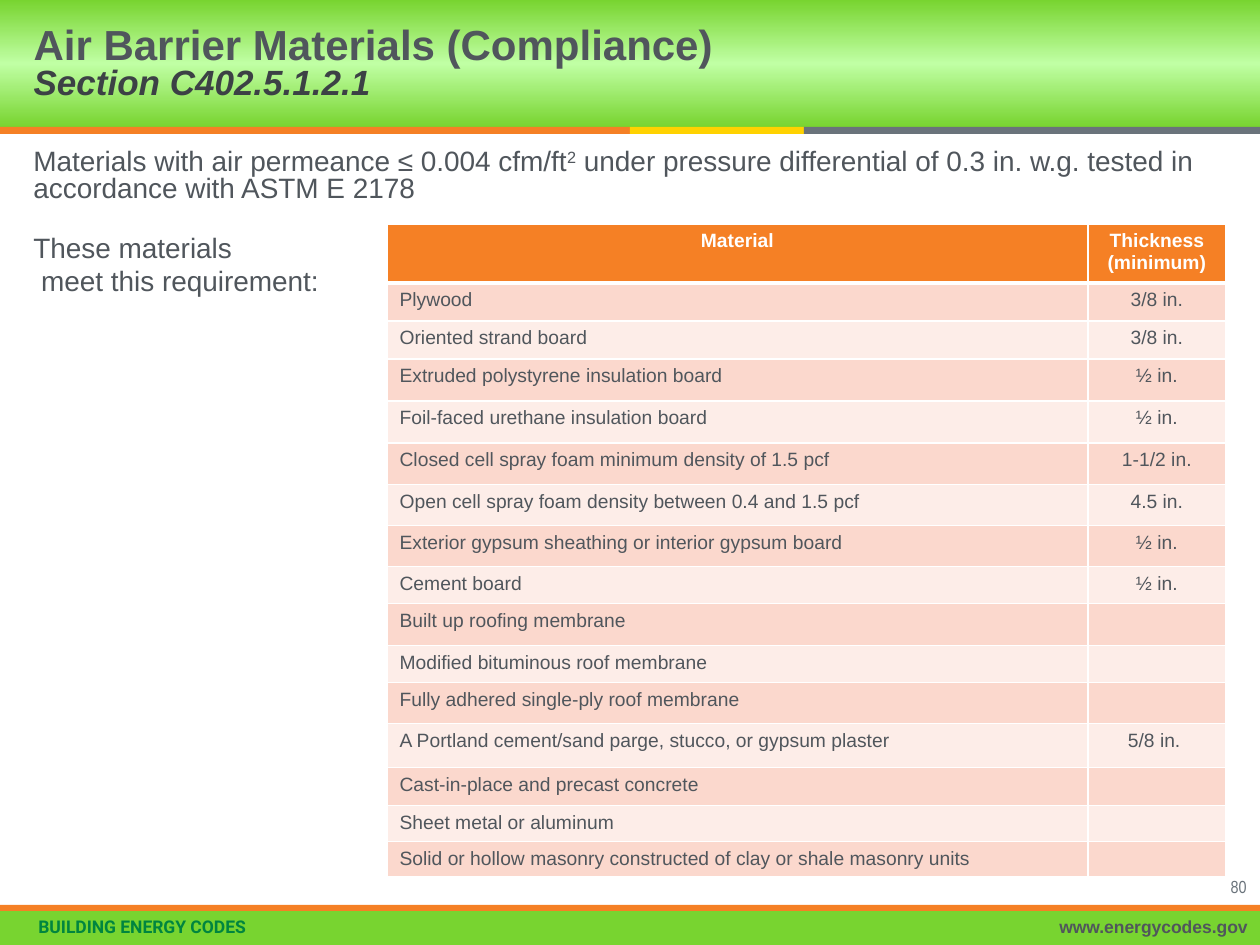
from pptx import Presentation, util as u
from pptx.dml.color import RGBColor
from pptx.enum import shapes, text
from pptx.oxml import parse_xml
from pptx.oxml.ns import nsdecls
from pptx.oxml.xmlchemy import OxmlElement

PX = 914400 // 126
COLORS = {
    "green": "78D430", "light green": "C0FFA4", "dark green": "00853F",
    "orange": "F58025", "yellow": "FFD200", "gray": "6A737B",
    "ink": "50565C", "dark ink": "3C4145", "white": "FFFFFF",
    "odd row": "FBD8CD", "even row": "FDEDE8",
}
MATERIALS = [
    ("Material", "Thickness (minimum)"),
    ("Plywood", "3/8 in."),
    ("Oriented strand board", "3/8 in."),
    ("Extruded polystyrene insulation board", "½ in."),
    ("Foil-faced urethane insulation board", "½ in."),
    ("Closed cell spray foam minimum density of 1.5 pcf", "1-1/2 in."),
    ("Open cell spray foam density between 0.4 and 1.5 pcf", "4.5 in."),
    ("Exterior gypsum sheathing or interior gypsum board", "½ in."),
    ("Cement board", "½ in."),
    ("Built up roofing membrane", ""),
    ("Modified bituminous roof membrane", ""),
    ("Fully adhered single-ply roof membrane", ""),
    ("A Portland cement/sand parge, stucco, or gypsum plaster", "5/8 in. "),
    ("Cast-in-place and precast concrete", ""),
    ("Sheet metal or aluminum", ""),
    ("Solid or hollow masonry constructed of clay or shale masonry units", ""),
]
ROW_HEIGHTS = [57, 38, 38, 42, 42, 42, 41, 41, 37, 42, 37, 41, 44, 38, 36, 35]
COLUMN_WIDTHS = [701, 138]


def px(*lengths):
    return [u.Emu(length * PX) for length in lengths]


def rgb(name):
    return RGBColor.from_string(COLORS[name])


def set_font(font, size, color="ink", name="Arial", bold=False, italic=False):
    font.size, font.name = u.Pt(size), name
    font.bold, font.italic = bold, italic
    font.color.rgb = rgb(color)


def add_bar(slide, left, top, width, height, color):
    bar = slide.shapes.add_shape(shapes.MSO_SHAPE.RECTANGLE,
                                 *px(left, top, width, height))
    bar.shadow.inherit = False
    bar.line.fill.background()
    bar.fill.solid()
    bar.fill.fore_color.rgb = rgb(color)
    return bar


def add_banner(slide):
    """Green header that is lightest along its middle."""
    banner = add_bar(slide, 0, 0, 1260, 127, "green")
    stops = "".join(
        f'<a:gs pos="{position * 1000}"><a:srgbClr val="{COLORS[color]}"/></a:gs>'
        for position, color in [(0, "green"), (50, "light green"), (100, "green")])
    gradient = parse_xml(f'<a:gradFill {nsdecls("a")}><a:gsLst>{stops}</a:gsLst>'
                         '<a:lin ang="5400000" scaled="0"/></a:gradFill>')
    properties = banner._element.spPr
    solid = properties.find("{*}solidFill")
    properties.replace(solid, gradient)


def add_text_box(slide, left, top, width, height):
    box = slide.shapes.add_textbox(*px(left, top, width, height))
    box.text_frame.word_wrap = True
    return box


def add_label(slide, place, label, align, **font):
    para = add_text_box(slide, *place).text_frame.paragraphs[0]
    para.text, para.alignment, para.line_spacing = label, align, 0.9
    set_font(para.font, 10, **font)


def fill_title(slide):
    title = slide.shapes.title
    title.left, title.top, title.width, title.height = px(21, 0, 788, 130)
    frame = title.text_frame
    frame.auto_size = text.MSO_AUTO_SIZE.NONE
    frame.vertical_anchor = text.MSO_ANCHOR.MIDDLE
    frame.text = "Air Barrier Materials (Compliance)\nSection C402.5.1.2.1"
    heading, section = frame.paragraphs
    for para in (heading, section):
        para.alignment, para.line_spacing = text.PP_ALIGN.LEFT, 0.8
    set_font(heading.font, 24, bold=True)
    set_font(section.font, 20, "dark ink", bold=True, italic=True)


def add_requirement(slide):
    frame = add_text_box(slide, 21, 144, 1206, 166).text_frame
    frame.text = ("Materials with air permeance ≤ 0.004 cfm/ft\n"
                  "These materials\n meet this requirement:")
    for para, space in zip(frame.paragraphs, (0, 19, 3.5)):
        para.line_spacing, para.space_before = 0.8, u.Pt(space)
        set_font(para.font, 16)
    first = frame.paragraphs[0]
    square = first.add_run()
    square.text = "2"
    square.font._element.set("baseline", "30000")
    first.add_run().text = (" under pressure differential of 0.3 in. w.g. "
                            "tested in accordance with ASTM E 2178")


def set_borders(cell, top, bottom):
    properties = cell._tc.get_or_add_tcPr()
    for side, width in zip("LRTB", (1, 1, top, bottom)):
        properties.append(parse_xml(
            f'<a:ln{side} {nsdecls("a")} w="{u.Pt(width)}"><a:solidFill>'
            f'<a:srgbClr val="{COLORS["white"]}"/></a:solidFill></a:ln{side}>'))


def fill_cell(cell, label, row, column):
    header = row == 0
    set_borders(cell, 3 if row == 1 else 1, 3 if header else 1)
    cell.fill.solid()
    cell.fill.fore_color.rgb = rgb(
        "orange" if header else "odd row" if row % 2 else "even row")
    para = cell.text_frame.paragraphs[0]
    para.text = label
    centered = header or column == 1
    para.alignment = text.PP_ALIGN.CENTER if centered else text.PP_ALIGN.LEFT
    set_font(para.font, 11, "white" if header else "ink", bold=header)
    if not label:  # keeps an empty cell from growing its row
        end = OxmlElement("a:endParaRPr")
        end.set("sz", "1100")
        para._p.append(end)


def add_materials_table(slide):
    table = slide.shapes.add_table(
        len(MATERIALS), len(COLUMN_WIDTHS),
        *px(387, 224, sum(COLUMN_WIDTHS), sum(ROW_HEIGHTS))).table
    for column, width in zip(table.columns, px(*COLUMN_WIDTHS)):
        column.width = width
    for row, height in zip(table.rows, px(*ROW_HEIGHTS)):
        row.height = height
    for row, labels in enumerate(MATERIALS):
        for column, label in enumerate(labels):
            fill_cell(table.cell(row, column), label, row, column)


def main():
    deck = Presentation()
    deck.slide_width, deck.slide_height = px(1260, 945)
    slide = deck.slides.add_slide(deck.slide_layouts[5])
    title = slide.shapes.title._element

    add_banner(slide)
    for left, width, color in [(0, 630, "orange"), (630, 174, "yellow"),
                               (804, 456, "gray")]:
        add_bar(slide, left, 127, width, 7, color)
    add_bar(slide, 0, 911, 1260, 34, "green")
    add_bar(slide, 0, 905, 1260, 6, "orange")
    title.getparent().append(title)  # brings the title in front of the banner

    left, right = text.PP_ALIGN.LEFT, text.PP_ALIGN.RIGHT
    add_label(slide, (26, 912, 987, 33), "BUILDING ENERGY CODES", left,
              color="dark green", name="Roboto", bold=True)
    add_label(slide, (755, 912, 505, 33), "www.energycodes.gov", right, bold=True)
    add_label(slide, (1169, 872, 90, 23), "80", right,
              color="gray", name="Arial Narrow")
    fill_title(slide)
    add_requirement(slide)
    add_materials_table(slide)
    deck.save("out.pptx")


if __name__ == "__main__":
    main()
